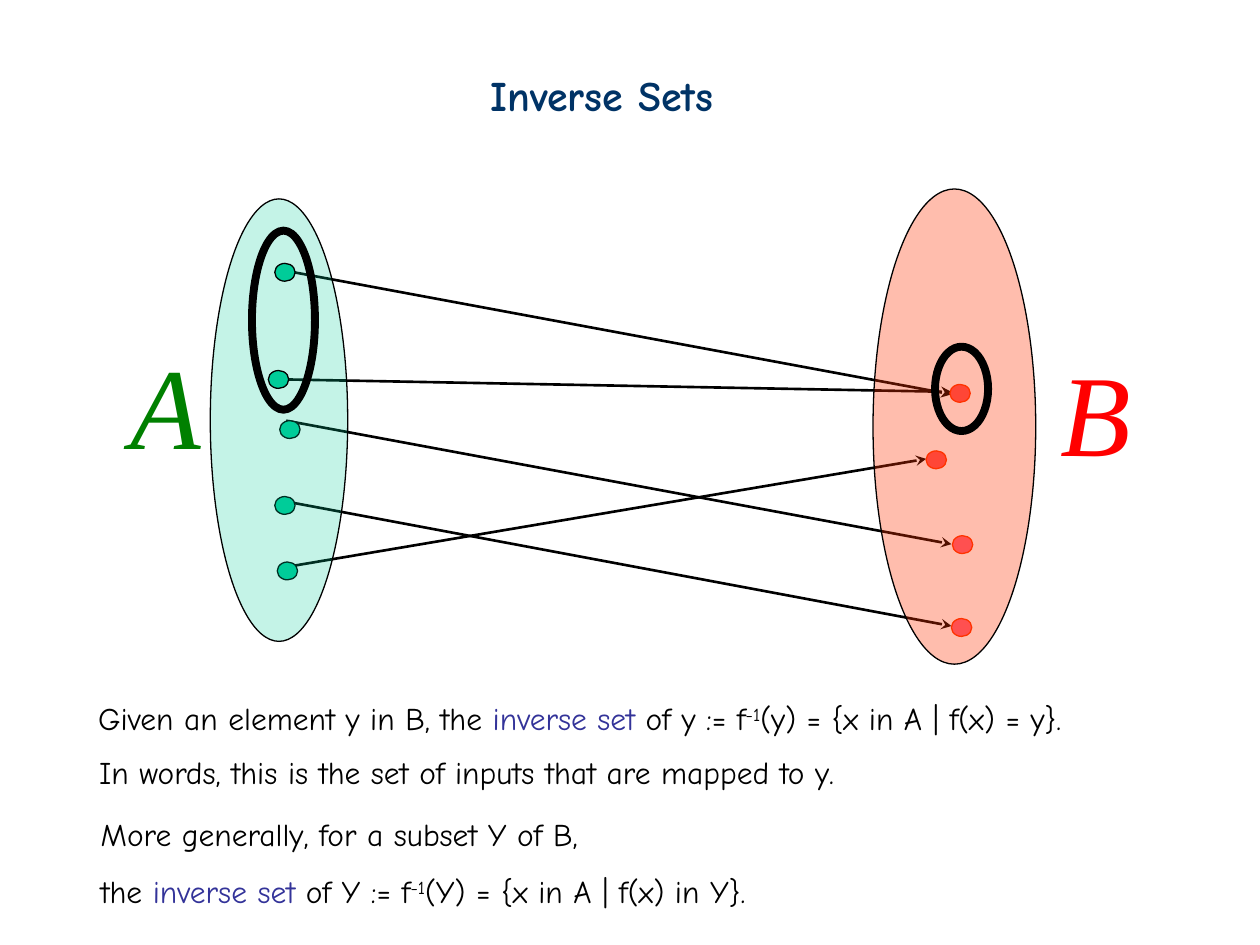
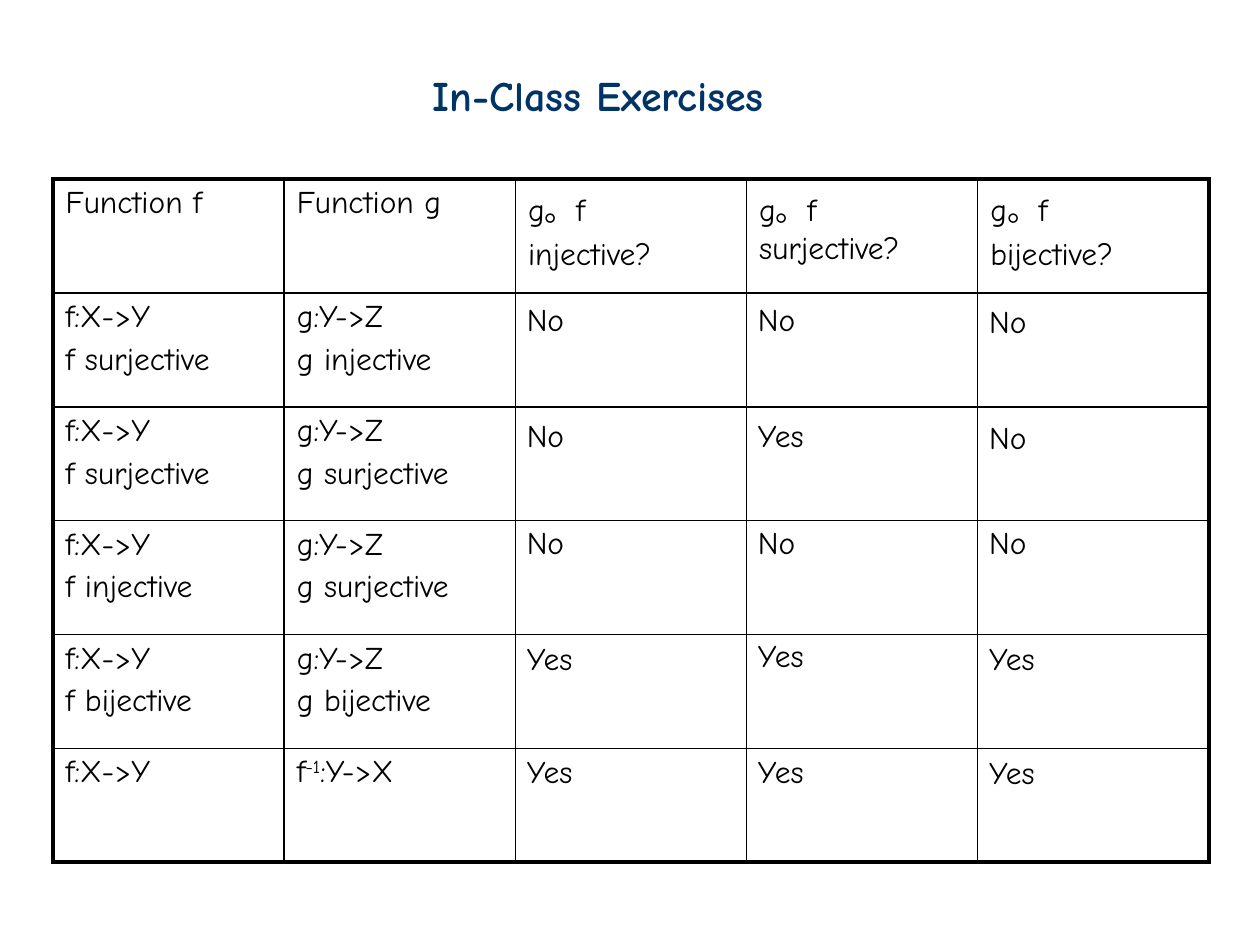
from dataclasses import dataclass
from typing import NamedTuple

from pptx import Presentation
from pptx.dml.color import RGBColor
from pptx.enum.shapes import MSO_CONNECTOR, MSO_SHAPE
from pptx.enum.text import MSO_ANCHOR, MSO_AUTO_SIZE, PP_ALIGN
from pptx.oxml.ns import qn
from pptx.slide import Slide
from pptx.table import _Cell
from pptx.text.text import TextFrame
from pptx.util import Cm, Pt
from lxml import etree

OVAL = MSO_SHAPE.OVAL
LINE = MSO_CONNECTOR.STRAIGHT
LEFT = PP_ALIGN.LEFT
TOP = MSO_ANCHOR.TOP
FIT = MSO_AUTO_SIZE.SHAPE_TO_FIT_TEXT


@dataclass(frozen=True)
class Theme:
    font: str = "Comic Neue"
    serif: str = "Times New Roman"
    title: str = "003366"
    ink: str = "000000"
    term: str = "333399"
    teal: str = "00CC99"
    green: str = "008000"
    rose: str = "FF5050"
    flame: str = "FF3300"
    red: str = "FF0000"
    head: float = 24
    body: float = 18
    big: float = 66
    thin: float = 0.75
    rule: float = 1
    arrow: float = 1.5
    frame: float = 2.25
    ring: float = 4.5


T = Theme()


class Bit(NamedTuple):
    text: str
    color: str = T.ink
    sup: bool = False


class Box(NamedTuple):
    x: float
    y: float
    w: float
    h: float


class Ray(NamedTuple):
    x1: float
    y1: float
    x2: float
    y2: float


class Case(NamedTuple):
    """A table row: both functions, then the answers and their tops."""
    f: tuple
    g: tuple
    words: str
    tops: tuple[float, float, float]


Para = str | tuple[Bit, ...]
POWER = Bit("-1", sup=True)
TERM = Bit("inverse set", T.term)

DOT_W, DOT_H = 0.41, 0.36
SET_A = Box(4.24, 4.01, 2.77, 8.92)
SET_B = Box(17.6, 3.81, 3.28, 9.58)
RINGS = (Box(18.85, 6.99, 1.07, 1.7), Box(5.08, 4.65, 1.27, 3.61))
LOW_A = ((5.64, 8.48), (5.54, 10.01), (5.59, 11.33))
TOP_A = ((5.54, 5.31), (5.41, 7.47))
TOP_B = ((18.67, 9.09), (19.15, 7.75))
LOW_B = ((19.2, 10.8), (19.18, 12.47))
RAYS = (
    Ray(5.77, 5.46, 19.18, 7.95),
    Ray(5.82, 7.65, 19.18, 7.9),
    Ray(5.77, 8.48, 19.18, 10.97),
    Ray(5.77, 10.11, 19.18, 12.62),
    Ray(5.77, 11.43, 18.67, 9.25),
)

GRID = Box(1.07, 3.61, 23.3, 13.77)
INSET = 9.3
HEADS = (
    ("Function f",),
    ("Function g",),
    ("g。f", "injective?"),
    ("g。f surjective?",),
    ("g。f", "bijective?"),
)
F, G = "f:X->Y", "g:Y->Z"
CASES = (
    Case((F, "f surjective"), (G, "g injective"), "No No No", (5.92, 5.92, 5.97)),
    Case((F, "f surjective"), (G, "g surjective"), "No Yes No", (8.26, 8.26, 8.31)),
    Case((F, "f injective"), (G, "g surjective"), "No No No", (10.41, 10.41, 10.41)),
    Case((F, "f bijective"), (G, "g bijective"), "Yes Yes Yes", (12.75, 12.7, 12.75)),
    Case((F,), ((Bit("f"), POWER, Bit(":Y->X")),), "Yes Yes Yes", (15.04, 15.04, 15.06)),
)


def write(frame: TextFrame, *paras: Para, size: float = T.body,
          font: str = T.font, color: str = T.ink, bold: bool = False,
          italic: bool = False, gap: float = 0, pitch: float = 1) -> None:
    """Fill a frame; gap and pitch apply from the second paragraph on."""
    for i, para in enumerate(paras):
        p = frame.add_paragraph() if i else frame.paragraphs[0]
        p.alignment = LEFT
        if i:
            p.space_before = Pt(gap)
            p.line_spacing = pitch
        for bit in (Bit(para, color),) if isinstance(para, str) else para:
            run = p.add_run()
            run.text = bit.text
            face = run.font
            face.name, face.size = font, Pt(size)
            face.bold, face.italic = bold, italic
            face.color.rgb = RGBColor.from_string(bit.color)
            if bit.sup:
                run._r.get_or_add_rPr().set("baseline", "30000")


def loosen(frame: TextFrame) -> None:
    """Let the frame follow its text, without wrapping."""
    frame.word_wrap = False
    frame.auto_size = FIT
    frame.vertical_anchor = TOP


def label(slide: Slide, box: Box, *paras: Para, **style) -> None:
    frame = slide.shapes.add_textbox(*map(Cm, box)).text_frame
    loosen(frame)
    write(frame, *paras, **style)


def start(deck: Presentation, title: str, x: float, w: float) -> Slide:
    """Add a slide with its title."""
    slide = deck.slides.add_slide(deck.slide_layouts[5])
    head = slide.shapes.title
    head.left, head.top, head.width, head.height = map(Cm, (x, 1.27, w, 1.27))
    loosen(head.text_frame)
    write(head.text_frame, title, size=T.head, color=T.title, bold=True)
    return slide


def oval(slide: Slide, box: Box, fill: str | None = None, line: str = T.ink,
         width: float = T.thin, alpha: int = 100) -> None:
    shape = slide.shapes.add_shape(OVAL, *map(Cm, box))
    shape.shadow.inherit = False
    if fill:
        shape.fill.solid()
        shape.fill.fore_color.rgb = RGBColor.from_string(fill)
        if alpha < 100:
            tint = shape._element.spPr.find(f".//{qn('a:srgbClr')}")
            etree.SubElement(tint, qn("a:alpha"), val=str(alpha * 1000))
    else:
        shape.fill.background()
    shape.line.color.rgb = RGBColor.from_string(line)
    shape.line.width = Pt(width)


def dots(slide: Slide, spots: tuple, fill: str, line: str) -> None:
    for x, y in spots:
        oval(slide, Box(x, y, DOT_W, DOT_H), fill, line)


def arrow(slide: Slide, ray: Ray) -> None:
    link = slide.shapes.add_connector(LINE, *map(Cm, ray))
    link.line.color.rgb = RGBColor.from_string(T.ink)
    link.line.width = Pt(T.arrow)
    etree.SubElement(link.line._get_or_add_ln(), qn("a:tailEnd"), type="stealth")
    etree.SubElement(link._element.spPr, qn("a:effectLst"))


def border(cell: _Cell, widths: dict[str, float]) -> None:
    props = cell._tc.get_or_add_tcPr()
    for i, (side, width) in enumerate(widths.items()):
        edge = etree.Element(qn(f"a:ln{side}"), w=str(Pt(width)))
        fill = etree.SubElement(edge, qn("a:solidFill"))
        etree.SubElement(fill, qn("a:srgbClr"), val=T.ink)
        props.insert(i, edge)


def sets(deck: Presentation) -> None:
    slide = start(deck, "Inverse Sets", 9.63, 5.82)
    for ray in RAYS:
        arrow(slide, ray)
    dots(slide, LOW_A, T.teal, T.ink)
    oval(slide, SET_A, T.teal, alpha=23)
    dots(slide, TOP_B, T.rose, T.flame)
    oval(slide, SET_B, T.flame, alpha=32)
    dots(slide, LOW_B, T.rose, T.flame)
    for name, x, y, color in (("A", 2.39, 6.6, T.green), ("B", 21.13, 6.76, T.red)):
        label(slide, Box(x, y, 1.93, 3.05), name, size=T.big,
              font=T.serif, color=color, italic=True)
    dots(slide, TOP_A, T.teal, T.ink)
    for ring in RINGS:
        oval(slide, ring, width=T.ring)
    label(slide, Box(1.73, 13.97, 21.77, 1.02),
          (Bit("Given an element y in B, the "), TERM, Bit(" of y := f"),
           POWER, Bit("(y) = {x in A | f(x) = y}.")))
    label(slide, Box(1.75, 15.06, 17.07, 1.02),
          "In words, this is the set of inputs that are mapped to y.")
    label(slide, Box(1.78, 16.31, 15.16, 2.18),
          "More generally, for a subset Y of B,",
          (Bit("the "), TERM, Bit(" of Y := f"),
           POWER, Bit("(Y) = {x in A | f(x) in Y}.")), pitch=1.5)


def drill(deck: Presentation) -> None:
    """Add the exercise slide: a table with answers laid over it."""
    slide = start(deck, "In-Class Exercises", 8.46, 8.23)
    rows = [HEADS] + [(case.f, case.g, (), (), ()) for case in CASES]
    high, wide = len(rows), len(HEADS)
    table = slide.shapes.add_table(high, wide, *map(Cm, GRID)).table
    table.first_row = table.horz_banding = False
    for col in table.columns:
        col.width = Cm(GRID.w / wide)
    for r, row in enumerate(rows):
        table.rows[r].height = Cm(GRID.h / high)
        for c, paras in enumerate(row):
            cell = table.cell(r, c)
            cell.fill.background()
            write(cell.text_frame, *paras, gap=T.body / 5)
            outer = {"L": c == 0, "R": c == wide - 1, "T": r == 0, "B": r == high - 1}
            border(cell, {side: T.frame if out else T.rule
                          for side, out in outer.items()})
    for case in CASES:
        for i, (word, top) in enumerate(zip(case.words.split(), case.tops)):
            x = GRID.x + INSET + i * GRID.w / wide
            label(slide, Box(x, top, 1.35 if word == "No" else 1.57, 1.02), word)


def main() -> None:
    deck = Presentation()
    deck.slide_width, deck.slide_height = Cm(25.4), Cm(19.05)
    sets(deck)
    drill(deck)
    deck.save("out.pptx")


if __name__ == "__main__":
    main()
